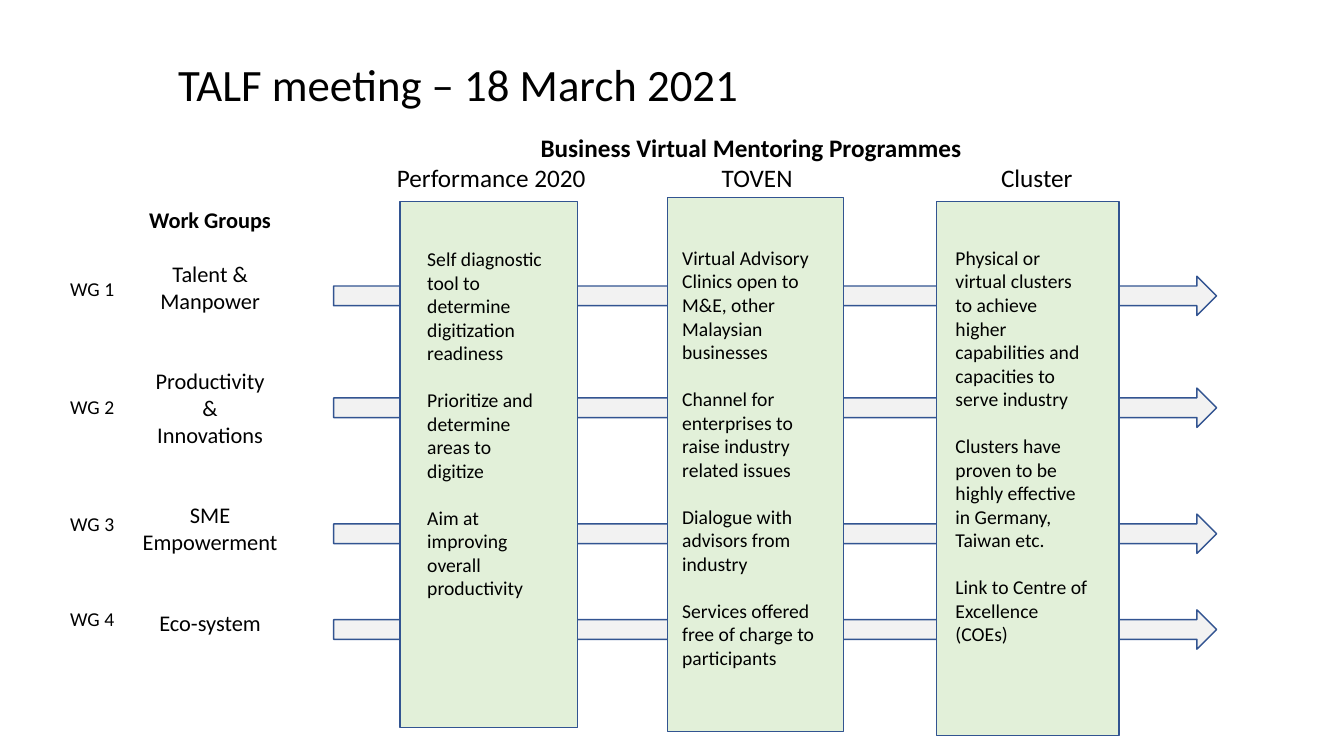
"""Build the TALF meeting slide: work group arrows crossing three mentoring programmes."""
from typing import NamedTuple

from lxml.etree import SubElement
from pptx import Presentation
from pptx.dml.color import RGBColor
from pptx.enum.shapes import MSO_SHAPE as Preset
from pptx.enum.text import MSO_ANCHOR as Anchor, PP_ALIGN as Align
from pptx.oxml.ns import qn
from pptx.util import Pt


class Box(NamedTuple):
    left: float
    top: float
    width: float
    height: float


class Line(NamedTuple):
    text: str
    gap: float = 0
    bold: bool = False
    align: Align = Align.CENTER


class Programme(NamedTuple):
    pillar: Box
    details: Box
    points: list[str]


FONT = "Calibri"
BLACK, OUTLINE, ARROW_FILL, PILLAR_FILL = "000000", "325491", "F2F2F2", "E2F0D9"
ROW_16, ROW_14 = 19.1, 16.8
ARROW_TOPS = [197.3, 277.2, 367.2, 435.6]
LABEL_TABS = [232, 431.5]

PROGRAMMES = [
    Programme(Box(285.8, 144, 126.7, 375.8), Box(298.1, 172.8, 97.2, 295.9), [
        "Self diagnostic tool to determine digitization readiness",
        "Prioritize and determine areas to digitize",
        "Aim at improving overall productivity",
    ]),
    Programme(Box(476.6, 141.1, 126, 381.6), Box(480.2, 172.1, 109.4, 312.5), [
        "Virtual Advisory Clinics open to M&E, other Malaysian businesses",
        "Channel for enterprises to raise industry related issues",
        "Dialogue with advisors from industry",
        "Services offered free of charge to participants",
    ]),
    Programme(Box(668.9, 144, 130.3, 381.6), Box(675.4, 172.1, 108.7, 312.5), [
        "Physical or virtual clusters to achieve higher capabilities "
        "and capacities to serve industry",
        "Clusters have proven to be highly effective in Germany, Taiwan etc.",
        "Link to Centre of Excellence (COEs)",
    ]),
]

WORK_GROUPS = [
    Line("Work Groups", bold=True),
    Line("Talent & Manpower", ROW_16),
    Line("Productivity", 2 * ROW_16),
    Line("&"),
    Line("Innovations"),
    Line("SME Empowerment", 2 * ROW_16),
    Line("Eco-system", 2 * ROW_16),
]
GROUP_NUMBERS = [Line(f"WG {number}", blanks * ROW_14)
                 for number, blanks in enumerate([0, 4, 4, 3], start=1)]


def colour(value: str) -> RGBColor:
    """Turn a hex string into a colour."""
    return RGBColor.from_string(value)


def add_text(slide, box: Box, lines: list[Line], size: float, anchor: Anchor = Anchor.TOP):
    """Add a wrapping text box and return its frame."""
    frame = slide.shapes.add_textbox(*map(Pt, box)).text_frame
    frame.word_wrap = True
    frame.vertical_anchor = anchor
    for index, line in enumerate(lines):
        paragraph = frame.add_paragraph() if index else frame.paragraphs[0]
        paragraph.alignment = line.align
        paragraph.space_before = Pt(line.gap)
        run = paragraph.add_run()
        run.text = line.text
        run.font.name = FONT
        run.font.size = Pt(size)
        run.font.bold = line.bold
        run.font.color.rgb = colour(BLACK)
    return frame


def add_block(slide, preset: Preset, box: Box, fill: str) -> None:
    """Add an outlined, filled shape."""
    block = slide.shapes.add_shape(preset, *map(Pt, box))
    block.shadow.inherit = False
    block.fill.solid()
    block.fill.fore_color.rgb = colour(fill)
    block.line.color.rgb = colour(OUTLINE)
    block.line.width = Pt(1)


def add_programme_headings(slide) -> None:
    """Add the shared heading and the tabbed programme names."""
    frame = add_text(slide, Box(276.5, 90.7, 509, 51.1), [
        Line("Business Virtual Mentoring Programmes", bold=True),
        Line("Performance 2020\tTOVEN\tCluster", align=Align.LEFT),
    ], 18)
    heading, names = frame.paragraphs
    heading._p.get_or_add_pPr().set("marL", str(Pt(11)))
    tabs = SubElement(names._p.get_or_add_pPr(), qn("a:tabLst"))
    for position in LABEL_TABS:
        SubElement(tabs, qn("a:tab"), pos=str(Pt(position)), algn="l")


def main() -> None:
    """Compose and save the slide."""
    deck = Presentation()
    deck.slide_width, deck.slide_height = Pt(960), Pt(540)
    slide = deck.slides.add_slide(deck.slide_layouts[6])

    title = add_text(slide, Box(120.2, 36.7, 720, 46.1),
                     [Line("TALF meeting – 18 March 2021", align=Align.LEFT)], 32, Anchor.BOTTOM)
    title.paragraphs[0].line_spacing = 0.9
    add_text(slide, Box(91.4, 144, 117.4, 375.8), WORK_GROUPS, 16)
    for top in ARROW_TOPS:
        add_block(slide, Preset.RIGHT_ARROW, Box(238.3, top, 630.7, 28.1), ARROW_FILL)
    for programme in PROGRAMMES:
        add_block(slide, Preset.RECTANGLE, programme.pillar, PILLAR_FILL)
    add_programme_headings(slide)
    add_text(slide, Box(28.8, 194.4, 74.2, 262.1), GROUP_NUMBERS, 14)
    for programme in PROGRAMMES:
        points = [Line(point, ROW_14 if index else 0, align=Align.LEFT)
                  for index, point in enumerate(programme.points)]
        add_text(slide, programme.details, points, 14)

    deck.save("out.pptx")


if __name__ == "__main__":
    main()
